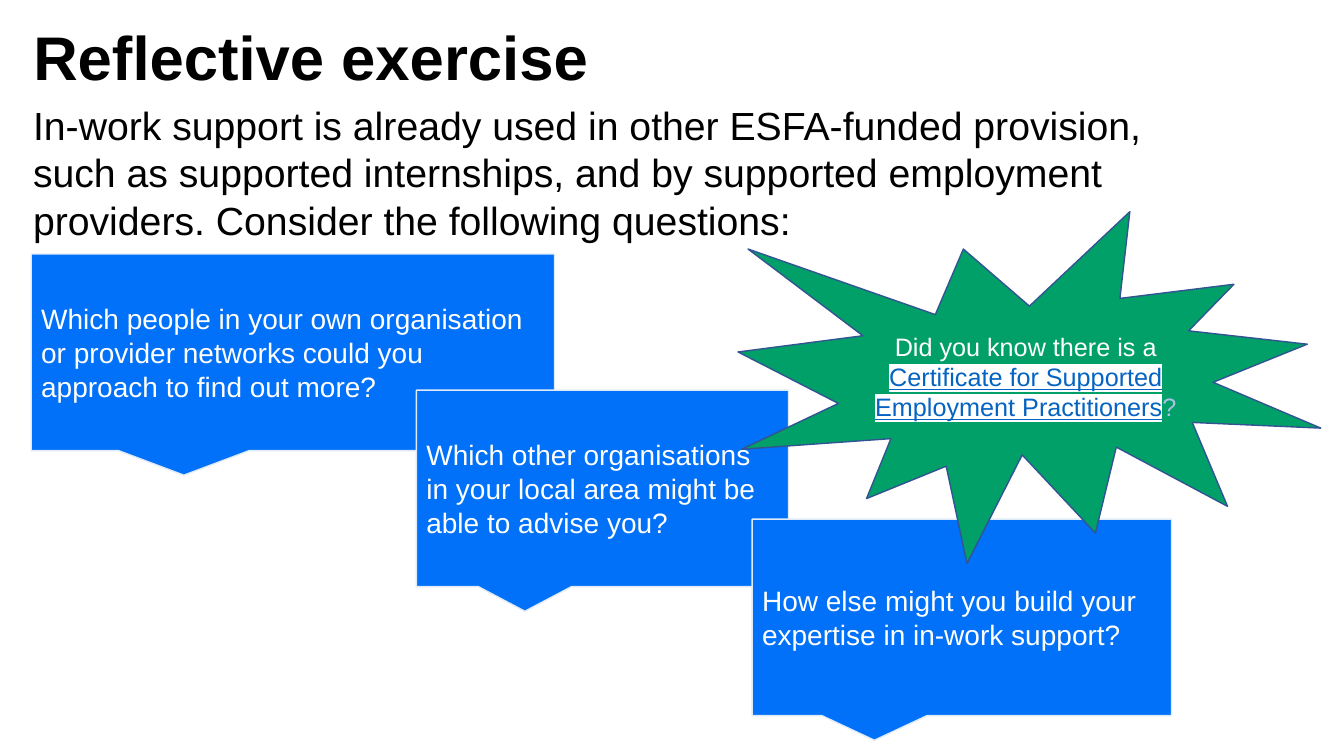
from lxml import etree
from pptx import Presentation
from pptx.dml.color import RGBColor
from pptx.enum.shapes import MSO_SHAPE
from pptx.enum.text import MSO_ANCHOR, MSO_AUTO_SIZE, PP_ALIGN
from pptx.oxml.ns import qn
from pptx.util import Inches, Pt

CALLOUT, STARBURST = MSO_SHAPE.RECTANGULAR_CALLOUT, MSO_SHAPE.EXPLOSION1
LEFT, CENTER = PP_ALIGN.LEFT, PP_ALIGN.CENTER
TOP, MIDDLE = MSO_ANCHOR.TOP, MSO_ANCHOR.MIDDLE
NO_FIT = MSO_AUTO_SIZE.NONE

BLACK = RGBColor(0x00, 0x00, 0x00)
WHITE = RGBColor(0xFF, 0xFF, 0xFF)
BLUE = RGBColor(0x00, 0x71, 0xF8)
PALE_BLUE = RGBColor(0xDE, 0xEB, 0xF7)
GREEN = RGBColor(0x00, 0xA0, 0x68)
NAVY = RGBColor(0x32, 0x54, 0x91)
LINK_BLUE = RGBColor(0x05, 0x63, 0xC1)
MIST = RGBColor(0xAB, 0xC0, 0xE4)

FONT = "Arial"
SLIDE_WIDTH, SLIDE_HEIGHT = Inches(13.33), Inches(7.5)
TEXT_LEFT, TEXT_WIDTH = Inches(0.23), Inches(11.5)
QUESTION_HEIGHT = 1.95

QUESTIONS = [
    (0.31, 2.52, 5.19, "Which people in your own organisation or provider networks "
                       "could you approach to find out more?"),
    (4.13, 3.87, 3.69, "Which other organisations in your local area might be able to advise you?"),
    (7.46, 5.15, 4.16, "How else might you build your expertise in in-work support?"),
]


def format_text(frame, size, color, align=LEFT, anchor=MIDDLE, bold=False):
    """Apply one font, alignment and anchor to all text in a frame."""
    frame.word_wrap = True
    frame.auto_size = NO_FIT
    frame.vertical_anchor = anchor
    for paragraph in frame.paragraphs:
        paragraph.alignment = align
        for run in paragraph.runs:
            run.font.name = FONT
            run.font.size = Pt(size)
            run.font.bold = bold
            run.font.color.rgb = color


def highlight(run, color):
    """Put a highlight colour behind a run that already has a fill."""
    mark = etree.Element(qn("a:highlight"))
    etree.SubElement(mark, qn("a:srgbClr"), val=str(color))
    run.font.fill
    run.font._element.find(qn("a:solidFill")).addnext(mark)


def add_heading(slide):
    """Place the slide title."""
    title = slide.shapes.title
    title.left, title.top = TEXT_LEFT, Inches(0.01)
    title.width, title.height = TEXT_WIDTH, Inches(1.18)
    title.text_frame.text = "Reflective exercise"
    title.text_frame.paragraphs[0].line_spacing = 0.9
    format_text(title.text_frame, 44, BLACK, bold=True)


def add_introduction(slide):
    """Add the paragraph that leads to the questions."""
    introduction = slide.shapes.add_textbox(TEXT_LEFT, Inches(0.96), TEXT_WIDTH, Inches(4.76))
    frame = introduction.text_frame
    frame.text = ("In-work support is already used in other ESFA-funded provision, such as "
                  "supported internships, and by supported employment providers. "
                  "Consider the following questions:")
    frame.paragraphs[0].space_after = Pt(6)
    format_text(frame, 28, BLACK, anchor=TOP)


def add_panel(slide, preset, left, top, width, height, fill, outline):
    """Add a filled and outlined shape, and return its text frame."""
    panel = slide.shapes.add_shape(preset, Inches(left), Inches(top), Inches(width), Inches(height))
    panel.shadow.inherit = False
    panel.fill.solid()
    panel.fill.fore_color.rgb = fill
    panel.line.color.rgb = outline
    panel.line.width = Pt(1)
    return panel.text_frame


def add_question(slide, left, top, width, question):
    """Add one question as a speech callout."""
    frame = add_panel(slide, CALLOUT, left, top, width, QUESTION_HEIGHT, BLUE, PALE_BLUE)
    frame.text = question
    format_text(frame, 20, WHITE)


def add_did_you_know(slide):
    """Add the starburst that points to the certificate."""
    frame = add_panel(slide, STARBURST, 7.32, 2.1, 5.78, 3.49, GREEN, NAVY)
    frame.text = "Did you know there is a"
    fact = frame.add_paragraph()
    certificate, question_mark = fact.add_run(), fact.add_run()
    certificate.text = "Certificate for Supported Employment Practitioners"
    question_mark.text = "?"
    format_text(frame, 18, WHITE, align=CENTER)
    certificate.font.color.rgb = LINK_BLUE
    certificate.font.underline = True
    highlight(certificate, WHITE)
    question_mark.font.color.rgb = MIST


def main():
    """Build and save the slide."""
    deck = Presentation()
    deck.slide_width, deck.slide_height = SLIDE_WIDTH, SLIDE_HEIGHT
    slide = deck.slides.add_slide(deck.slide_layouts[5])
    add_heading(slide)
    add_introduction(slide)
    for left, top, width, question in QUESTIONS:
        add_question(slide, left, top, width, question)
    add_did_you_know(slide)
    deck.save("out.pptx")


if __name__ == "__main__":
    main()
